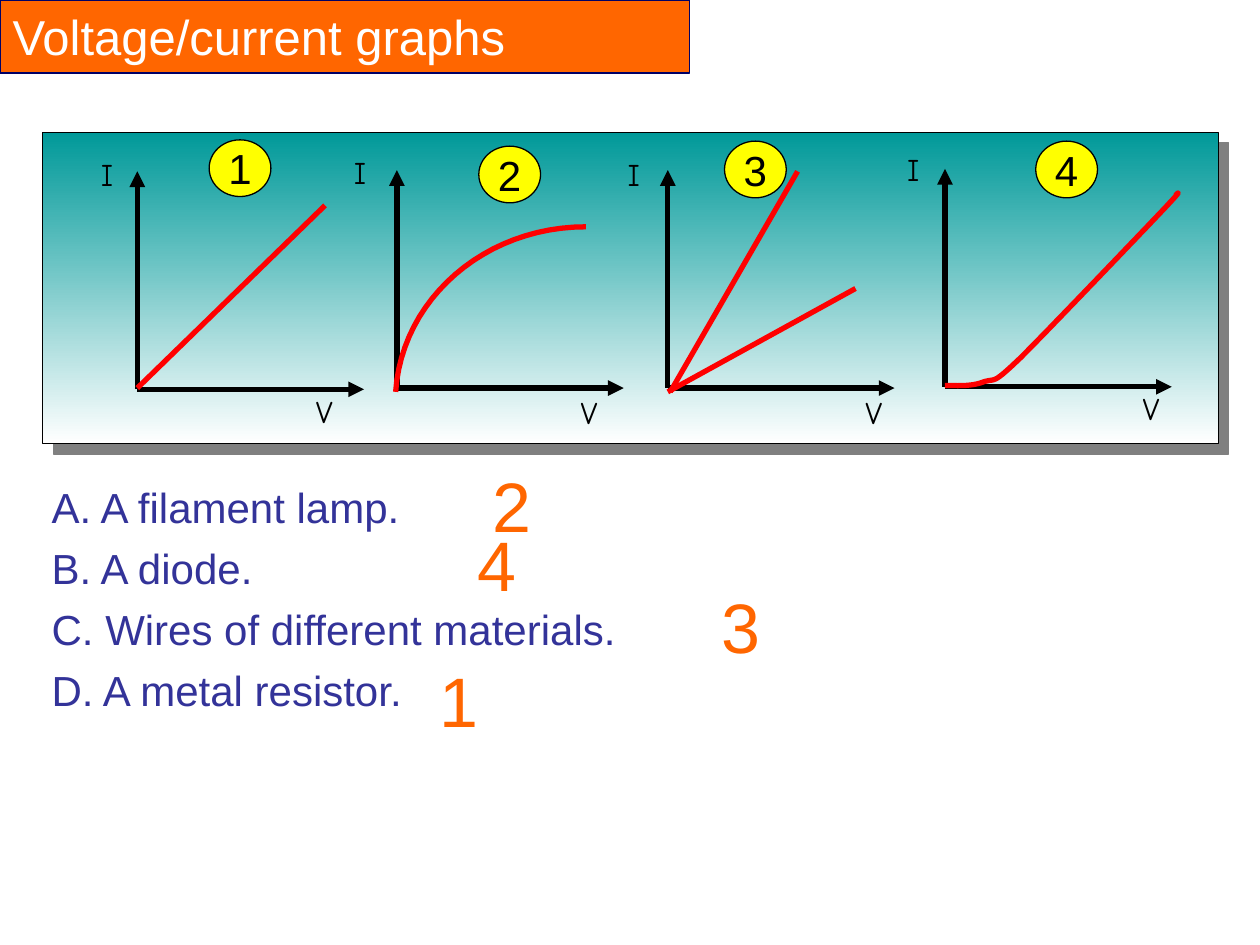
import pptx
import pptx.util
import pptx.dml.color
import pptx.enum.shapes
import pptx.enum.text
import pptx.oxml.ns
import lxml.etree

Inches = pptx.util.Inches
Pt = pptx.util.Pt
qn = pptx.oxml.ns.qn

COLORS = {
    "teal": "009999", "white": "FFFFFF", "orange": "FF6600", "navy": "000066",
    "indigo": "333399", "black": "000000", "red": "FF0000", "yellow": "FFFF00",
    "gray": "808080",
}
BODY_FONT = "Arial"
AXIS_FONT = "Comic Neue"


def color(name):
    return pptx.dml.color.RGBColor.from_string(COLORS[name])


def apply(target, values):
    for name, value in values.items():
        setattr(target, name, value)


def bezier(start, control_1, control_2, end, steps=24):
    points = []
    for step in range(steps + 1):
        t = step / steps
        weights = ((1 - t) ** 3, 3 * t * (1 - t) ** 2, 3 * t ** 2 * (1 - t), t ** 3)
        points.append(tuple(
            sum(weight * value for weight, value in zip(weights, values))
            for values in zip(start, control_1, control_2, end)))
    return points


class GraphSlide:
    def __init__(self, presentation):
        self.slide = presentation.slides.add_slide(presentation.slide_layouts[1])
        self.shapes = self.slide.shapes

    def place(self, shape, left, top, width, height):
        apply(shape, {"left": Inches(left), "top": Inches(top),
                      "width": Inches(width), "height": Inches(height)})

    def outline(self, shape, line_color, width):
        shape.line.color.rgb = color(line_color)
        shape.line.width = Pt(width)

    def fill_text(self, shape, paragraphs, font_name, text_color, before=0, align="LEFT",
                  **frame):
        text_frame = shape.text_frame
        apply(text_frame, {"word_wrap": True,
                           "auto_size": pptx.enum.text.MSO_AUTO_SIZE.NONE,
                           "vertical_anchor": pptx.enum.text.MSO_ANCHOR.TOP, **frame})
        for index, runs in enumerate(paragraphs):
            paragraph = text_frame.paragraphs[0] if index == 0 else text_frame.add_paragraph()
            apply(paragraph, {"space_before": Pt(before),
                              "alignment": pptx.enum.text.PP_ALIGN[align]})
            for text, size in runs:
                run = paragraph.add_run()
                run.text = text
                apply(run.font, {"name": font_name, "size": Pt(size)})
                run.font.color.rgb = color(text_color)

    def title(self, text, box):
        shape = self.shapes.title
        self.place(shape, *box)
        shape.fill.solid()
        shape.fill.fore_color.rgb = color("orange")
        self.outline(shape, "navy", 0.75)
        self.fill_text(shape, [[(text, 28)]], BODY_FONT, "white", before=3)

    def body(self, items, box):
        shape = self.slide.placeholders[1]
        self.place(shape, *box)
        self.fill_text(shape, [[(item, 24)] for item in items], BODY_FONT, "indigo", before=6)
        for paragraph in shape.text_frame.paragraphs:
            properties = paragraph._p.get_or_add_pPr()
            properties.set("marL", "0")
            properties.set("indent", "0")
            lxml.etree.SubElement(properties, qn("a:buNone"))

    def text(self, runs, box, font_name, text_color, before=0, wrap=False):
        shape = self.shapes.add_textbox(*map(Inches, box))
        self.fill_text(shape, [runs], font_name, text_color, before=before, word_wrap=wrap,
                       auto_size=pptx.enum.text.MSO_AUTO_SIZE.SHAPE_TO_FIT_TEXT)

    def panel(self, box):
        shape = self.shapes.add_shape(pptx.enum.shapes.MSO_SHAPE.RECTANGLE, *map(Inches, box))
        shape.fill.gradient()
        shape.fill.gradient_angle = 270
        for stop, name, position in zip(shape.fill.gradient_stops, ("teal", "white"), (0, 1)):
            stop.color.rgb = color(name)
            stop.position = position
        self.outline(shape, "black", 0.75)
        shape.shadow.inherit = False
        effects = shape.element.spPr.find(qn("a:effectLst"))
        shadow = lxml.etree.SubElement(effects, qn("a:outerShdw"), {
            "dist": str(Pt(8.5)), "dir": "2700000", "algn": "ctr", "rotWithShape": "0"})
        lxml.etree.SubElement(shadow, qn("a:srgbClr"), {"val": COLORS["gray"]})

    def line(self, start, end, line_color, arrow=False):
        connector = self.shapes.add_connector(
            pptx.enum.shapes.MSO_CONNECTOR.STRAIGHT, *map(Inches, (*start, *end)))
        self.outline(connector, line_color, 3)
        properties = connector.element.spPr
        if arrow:
            lxml.etree.SubElement(properties.find(qn("a:ln")), qn("a:tailEnd"),
                                  {"type": "triangle"})
        lxml.etree.SubElement(properties, qn("a:effectLst"))

    def curve(self, points):
        scaled = [(Inches(x), Inches(y)) for x, y in points]
        builder = self.shapes.build_freeform(*scaled[0])
        builder.add_line_segments(scaled[1:], close=False)
        shape = builder.convert_to_shape()
        shape.fill.background()
        self.outline(shape, "red", 3)
        shape.shadow.inherit = False

    def axes(self, x, y, current_runs, current_box, voltage_at):
        self.line((x, y), (x, y - 1.73), "black", arrow=True)
        self.line((x, y), (x + 1.8, y), "black", arrow=True)
        self.text(current_runs, (*current_box, 0.5), AXIS_FONT, "black")
        self.text([("V", 18)], (*voltage_at, 0.36, 0.4), AXIS_FONT, "black")

    def badge(self, label, left, top):
        shape = self.shapes.add_shape(pptx.enum.shapes.MSO_SHAPE.OVAL,
                                      *map(Inches, (left, top, 0.49, 0.45)))
        shape.fill.solid()
        shape.fill.fore_color.rgb = color("yellow")
        self.outline(shape, "black", 0.75)
        shape.shadow.inherit = False
        self.fill_text(shape, [[(label, 24)]], BODY_FONT, "black", align="CENTER",
                       word_wrap=False, vertical_anchor=pptx.enum.text.MSO_ANCHOR.MIDDLE)


def main():
    presentation = pptx.Presentation()
    apply(presentation, {"slide_width": Inches(10), "slide_height": Inches(7.5)})
    graphs = GraphSlide(presentation)

    graphs.panel((0.34, 1.05, 9.33, 2.47))
    graphs.title("Voltage/current graphs", (0, 0, 5.47, 0.58))
    graphs.body(["A. A filament lamp.", "B. A diode.", "C. Wires of different materials.",
                 "D. A metal resistor."], (0.31, 3.77, 9.36, 1.96))

    space = (" ", 24)
    for axis in (
        (1.09, 3.09, [space, ("I", 18)], (0.59, 1.1, 0.51), (2.41, 3.06)),
        (3.15, 3.08, [space, ("I", 18), space], (2.6, 1.08, 0.54), (4.51, 3.07)),
        (5.3, 3.08, [(" I", 18), space], (4.8, 1.1, 0.51), (6.77, 3.07)),
        (7.5, 3.07, [space, ("I", 18), space], (6.99, 1.06, 0.54), (8.97, 3.04)),
    ):
        graphs.axes(*axis)

    for start, end in (((1.09, 3.08), (2.58, 1.63)), ((5.32, 3.11), (6.33, 1.36)),
                       ((5.3, 3.11), (6.79, 2.29))):
        graphs.line(start, end, "red")

    graphs.curve(bezier((4.65, 1.8), (3.85, 1.8), (3.19, 2.37), (3.14, 3.11)))
    diode = [(7.5, 3.06), (7.6, 3.06), (7.71, 3.07), (7.81, 3.03), (7.91, 3), (7.87, 3.06),
             (8.1, 2.84), (8.32, 2.62), (8.98, 1.93), (9.18, 1.72), (9.39, 1.5),
             (9.36, 1.52), (9.33, 1.55)]
    graphs.curve([point for first in range(0, len(diode) - 1, 3)
                  for point in bezier(*diode[first:first + 4])])

    for label, left, top in (("1", 1.66, 1.11), ("2", 3.8, 1.16),
                             ("3", 5.75, 1.12), ("4", 8.22, 1.12)):
        graphs.badge(label, left, top)

    for answer, left, top, width in (("2", 3.81, 3.62, 1.07), ("3", 5.63, 4.58, 0.51),
                                     ("1", 3.39, 5.17, 0.51), ("4", 3.69, 4.09, 0.51)):
        graphs.text([(answer, 40)], (left, top, width, 0.77), BODY_FONT, "orange",
                    before=3, wrap=width > 1)

    presentation.save("out.pptx")


if __name__ == "__main__":
    main()
